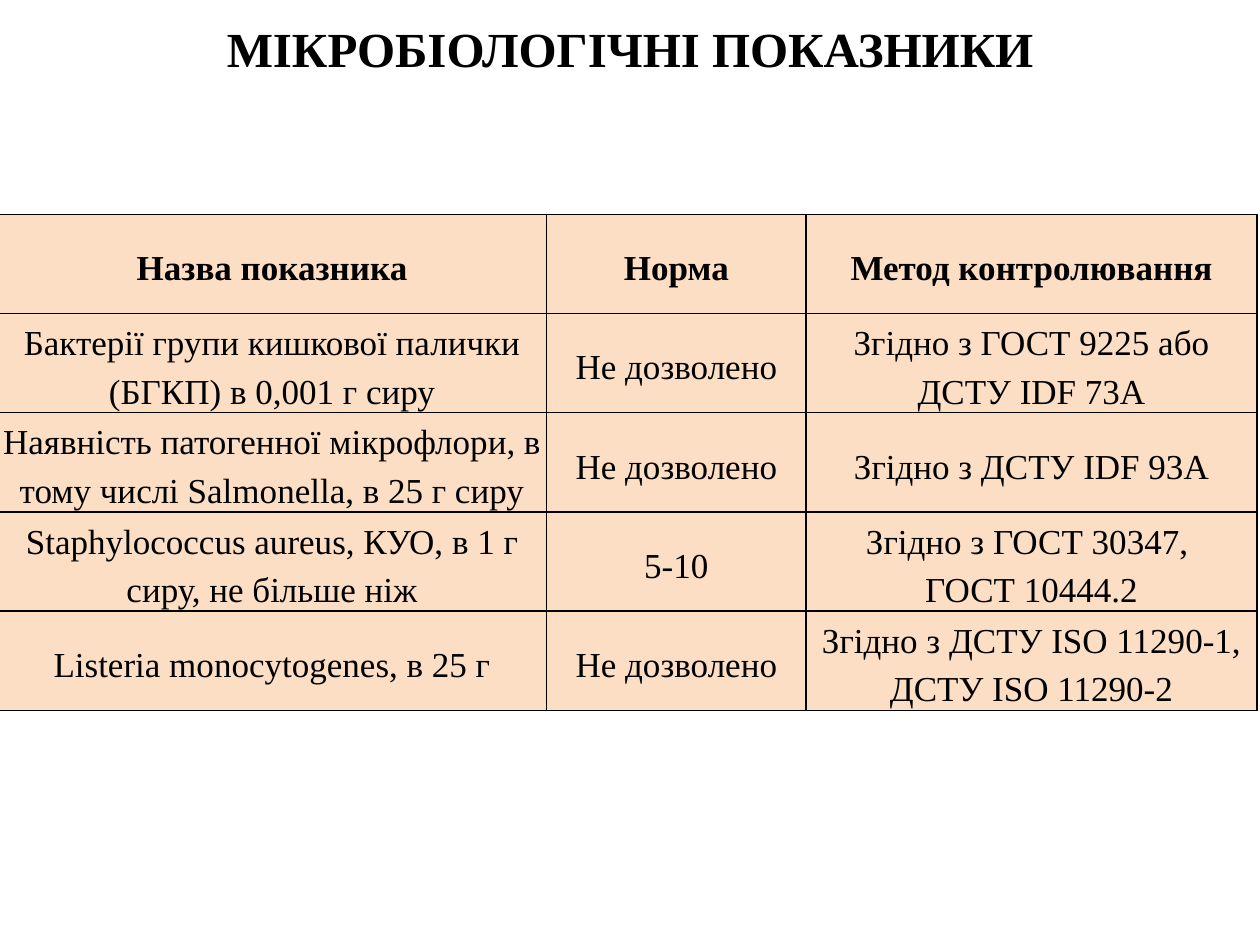
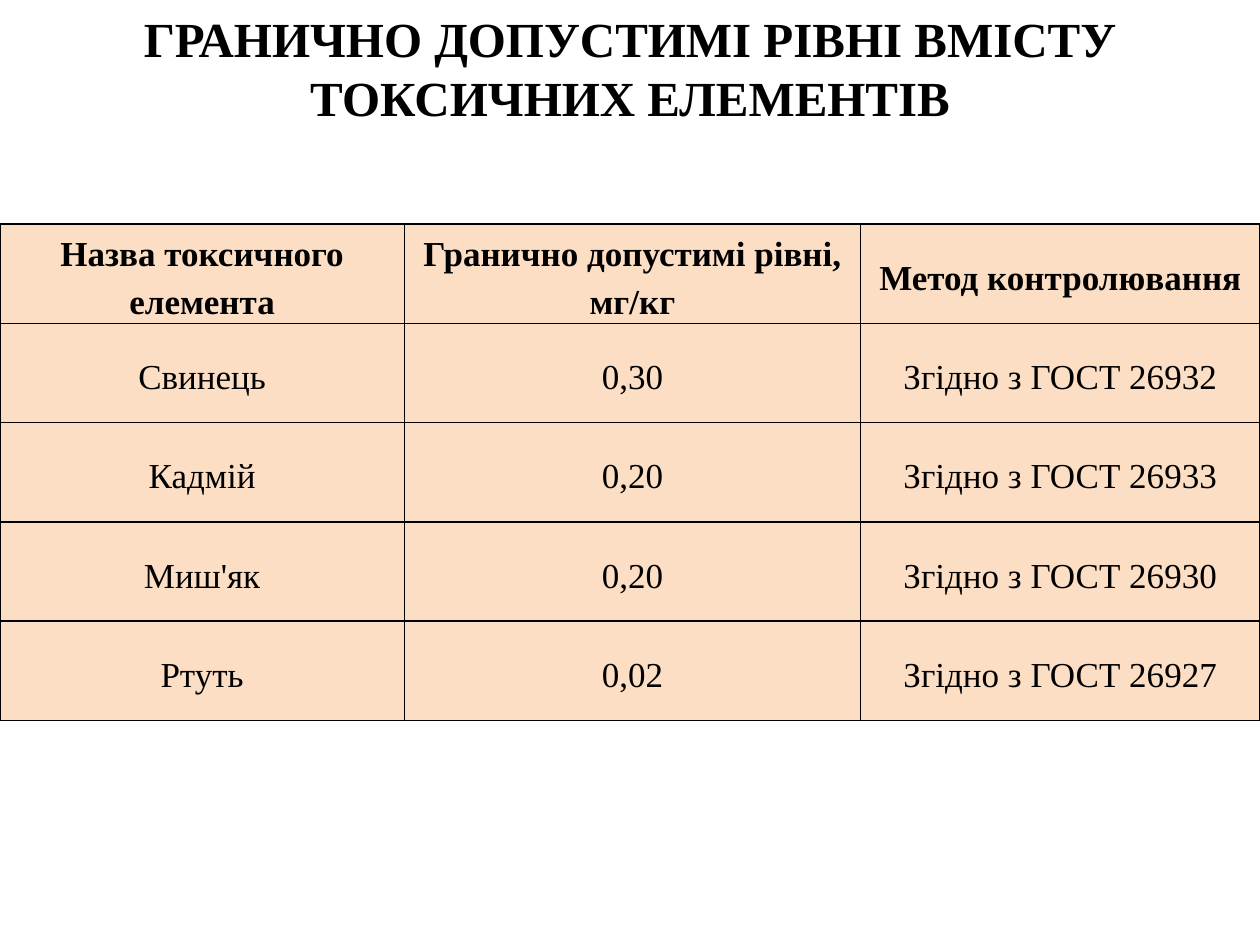
"""Build two slides with tables of cheese safety limits."""
from lxml.etree import SubElement
from pptx import Presentation
from pptx.dml.color import RGBColor
from pptx.enum.text import MSO_ANCHOR, MSO_AUTO_SIZE, PP_ALIGN
from pptx.oxml.ns import qn
from pptx.util import Cm, Pt

FONT = "Times New Roman"
BLACK = "000000"
PEACH = "FCD5B5"
ROW_HEIGHT = 2

SLIDES = [
    {
        "title": "МІКРОБІОЛОГІЧНІ ПОКАЗНИКИ",
        "title_height": 1.93,
        "left": -0.05,
        "top": 4.32,
        "widths": [11.07, 5.23, 9.09],
        "rows": [
            ["Назва показника", "Норма", "Метод контролювання"],
            ["Бактерії групи кишкової палички (БГКП) в 0,001 г сиру",
             "Не дозволено", "Згідно з ГОСТ 9225 або ДСТУ IDF 73A"],
            ["Наявність патогенної мікрофлори, в тому числі Salmonella, в 25 г сиру",
             "Не дозволено", "Згідно з ДСТУ IDF 93A"],
            ["Staphylococcus aureus, КУО, в 1 г сиру, не більше ніж",
             "5-10", "Згідно з ГОСТ 30347, \nГОСТ 10444.2"],
            ["Listeria monocytogenes, в 25 г",
             "Не дозволено", "Згідно з ДСТУ ISO 11290-1, ДСТУ ISO 11290-2"],
        ],
    },
    {
        "title": "ГРАНИЧНО ДОПУСТИМІ РІВНІ ВМІСТУ ТОКСИЧНИХ ЕЛЕМЕНТІВ",
        "title_height": 2.72,
        "left": 0,
        "top": 4.52,
        "widths": [8.15, 9.2, 8.05],
        "rows": [
            ["Назва токсичного елемента", "Гранично допустимі рівні, мг/кг",
             "Метод контролювання"],
            ["Свинець", "0,30", "Згідно з ГОСТ 26932"],
            ["Кадмій", "0,20", "Згідно з ГОСТ 26933"],
            ["Миш'як", "0,20", "Згідно з ГОСТ 26930"],
            ["Ртуть", "0,02", "Згідно з ГОСТ 26927"],
        ],
    },
]


def write(p, text, size, bold, color=BLACK):
    """Write centred text, one run per line."""
    p.alignment = PP_ALIGN.CENTER
    for i, line in enumerate(text.split("\n")):
        if i:
            p.add_line_break()
        r = p.add_run()
        r.text = line
        r.font.name = FONT
        r.font.size = Pt(size)
        r.font.bold = bold
        r.font.color.rgb = RGBColor.from_string(color)


def paint(cell, fill, line=BLACK):
    """Give a cell thin borders and a translucent fill."""
    tc_pr = cell._tc.get_or_add_tcPr()
    for side in ("a:lnL", "a:lnR", "a:lnT", "a:lnB"):
        ln = SubElement(tc_pr, qn(side), w=str(Pt(1)))
        SubElement(SubElement(ln, qn("a:solidFill")), qn("a:srgbClr"), val=line)
    cell.fill.solid()
    cell.fill.fore_color.rgb = RGBColor.from_string(fill)
    clr = tc_pr.find(qn("a:solidFill")).find(qn("a:srgbClr"))
    SubElement(clr, qn("a:alpha"), val="78000")


prs = Presentation()
prs.slide_width, prs.slide_height = Cm(25.4), Cm(19.05)

for data in SLIDES:
    s = prs.slides.add_slide(prs.slide_layouts[5])
    title = s.shapes.title
    title.left, title.top = Cm(0), Cm(0)
    title.width, title.height = prs.slide_width, Cm(data["title_height"])
    tf = title.text_frame
    tf.auto_size = MSO_AUTO_SIZE.NONE
    tf.vertical_anchor = MSO_ANCHOR.MIDDLE
    write(tf.paragraphs[0], data["title"], 28, True)

    rows, widths = data["rows"], data["widths"]
    table = s.shapes.add_table(
        len(rows), len(widths), Cm(data["left"]), Cm(data["top"]),
        Cm(sum(widths)), Cm(ROW_HEIGHT * len(rows))).table
    table.horz_banding = False
    for col, width in zip(table.columns, widths):
        col.width = Cm(width)
    for i, row in enumerate(rows):
        table.rows[i].height = Cm(ROW_HEIGHT)
        for j, text in enumerate(row):
            cell = table.cell(i, j)
            cell.vertical_anchor = MSO_ANCHOR.MIDDLE
            cell.margin_left = cell.margin_right = Cm(0.08)
            cell.margin_top = cell.margin_bottom = Cm(0)
            p = cell.text_frame.paragraphs[0]
            p.line_spacing = 1.25
            write(p, text, 20, i == 0)
            paint(cell, PEACH)

prs.save("out.pptx")
